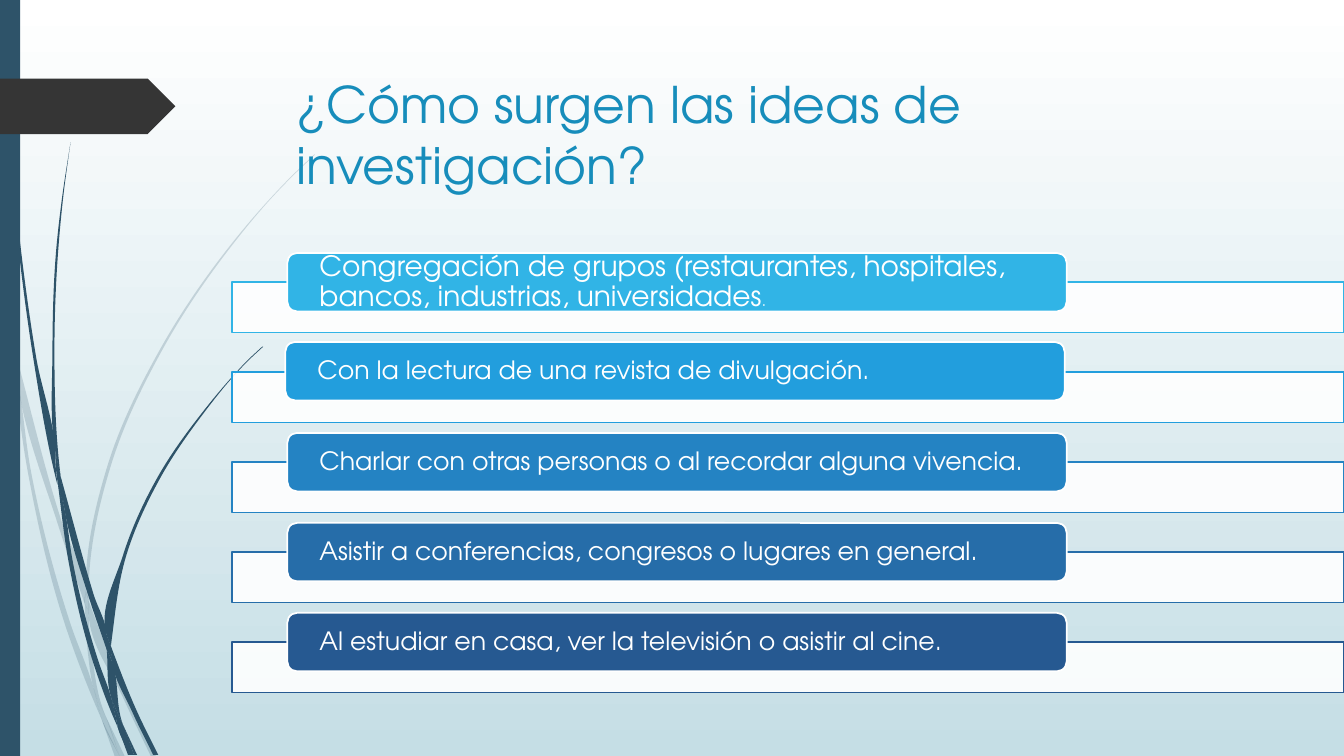
import math
from dataclasses import dataclass

from lxml import etree
from pptx import Presentation
from pptx.dml.color import RGBColor
from pptx.enum.shapes import MSO_SHAPE
from pptx.enum.text import MSO_ANCHOR, MSO_AUTO_SIZE, PP_ALIGN
from pptx.oxml.ns import qn
from pptx.util import Inches, Pt

RECT = MSO_SHAPE.RECTANGLE
ROUNDED = MSO_SHAPE.ROUNDED_RECTANGLE
PENTAGON = MSO_SHAPE.PENTAGON
TOP, MIDDLE = MSO_ANCHOR.TOP, MSO_ANCHOR.MIDDLE
LEFT = PP_ALIGN.LEFT
NO_AUTOFIT = MSO_AUTO_SIZE.NONE

FONT = "TeX Gyre Adventor"
WHITE = RGBColor(0xFF, 0xFF, 0xFF)
MIST = RGBColor(0xC5, 0xDE, 0xE5)
SLATE = RGBColor(0x2E, 0x53, 0x69)
CHARCOAL = RGBColor(0x35, 0x35, 0x35)
TITLE_BLUE = RGBColor(0x17, 0x8D, 0xBB)

ROW_TOP, ROW_PITCH = 2.8, 3.57 / 4
CORNER_COSINE = 0.8


@dataclass(frozen=True)
class Idea:
    text: str
    color: RGBColor
    left: float = 2.85
    rise: float = 0.29
    size: int = 18
    small_end: str = ""


IDEAS = (
    Idea("Congregación de grupos (restaurantes, hospitales, bancos, industrias, universidades",
         RGBColor(0x31, 0xB4, 0xE6), size=20, small_end="."),
    Idea("Con la lectura de una revista de divulgación.", RGBColor(0x22, 0x9E, 0xDD), 2.83, 0.3),
    Idea("Charlar con otras personas o al recordar alguna vivencia.", RGBColor(0x24, 0x83, 0xC3)),
    Idea("Asistir a conferencias, congresos o lugares en general.", RGBColor(0x26, 0x6D, 0xA9)),
    Idea("Al estudiar en casa, ver la televisión o asistir al cine.", RGBColor(0x26, 0x59, 0x91)),
)

PALE_BLADES = (
    ((0.11, 3.5), (0.09, 3.22), (0, 2.82), (0, 2.99), (0.1, 3.44)),
    ((0.58, 5.22), (0.84, 5.99), (0.85, 5.86), (0.62, 5.2), (0.14, 3.45), (0.17, 3.76)),
    ((0.92, 6.07), (0.88, 5.96), (0.88, 6.1), (1.23, 6.94), (1.5, 7.51), (1.55, 7.51), (1.27, 6.92)),
    ((1.19, 7.51), (1.24, 7.51), (1.05, 7.11)),
    ((0.93, 6.83), (0.7, 6.19), (0.31, 4.69), (0.17, 3.76), (0.11, 3.5), (0.28, 4.7), (0.65, 6.21),
     (0.92, 6.93), (1.01, 7.14), (0.99, 7.07)),
    ((0.84, 5.99), (0.87, 6.46), (0.93, 6.83), (0.96, 6.92), (1.05, 7.11), (1.03, 7.06),
     (0.91, 6.46), (0.88, 6.1), (0.88, 6.08)),
    ((0.88, 5.84), (1.1, 4.62), (1.6, 3.49), (2.29, 2.45), (2.68, 1.98), (2.9, 1.75), (3.12, 1.54),
     (3.12, 1.53), (2.89, 1.75), (2.68, 1.97), (2.28, 2.44), (1.58, 3.48), (1.07, 4.61),
     (0.85, 5.84), (0.85, 5.86), (0.88, 5.96)),
    ((1.01, 7.14), (1.14, 7.51), (1.19, 7.51)),
    ((0.88, 6.08), (0.88, 6.1), (0.88, 5.96), (0.85, 5.86), (0.84, 5.99)),
    ((0.96, 6.92), (0.93, 6.83), (0.99, 7.07), (1.01, 7.14), (1.19, 7.51), (1.05, 7.11)),
)

DARK_BLADES = (
    ((0.07, 1.1), (0.17, 2.33), (0.33, 3.55), (0.56, 4.77), (0.57, 4.81), (0.55, 4.57), (0.55, 4.53),
     (0.36, 3.55), (0.19, 2.32), (0.08, 1.09), (0.05, 0.48), (0.04, 0), (0.03, 0), (0.04, 0.48)),
    ((0.88, 5.92), (1.06, 6.45), (1.06, 6.33), (1.06, 6.31), (0.93, 5.9), (0.6, 4.72), (0.64, 5.05)),
    ((1.13, 6.49), (1.1, 6.41), (1.11, 6.56), (1.32, 7.08), (1.52, 7.49), (1.57, 7.49), (1.36, 7.06)),
    ((1.1, 6.91), (0.98, 6.57), (0.72, 5.56), (0.64, 5.05), (0.57, 4.77), (0.68, 5.57), (0.93, 6.59),
     (1.11, 7.08), (1.17, 7.22), (1.16, 7.17)),
    ((0.6, 4.72), (0.58, 4.53), (0.54, 3.49), (0.58, 2.45), (0.63, 1.93), (0.7, 1.41), (0.62, 1.93),
     (0.56, 2.45), (0.52, 3.49), (0.55, 4.49)),
    ((1.33, 7.49), (1.36, 7.49), (1.22, 7.19)),
    ((0.57, 4.77), (0.64, 5.05), (0.6, 4.72), (0.55, 4.49), (0.55, 4.53)),
    ((1.11, 6.33), (1.25, 5.52), (1.58, 4.76), (2.05, 4.06), (2.31, 3.74), (2.45, 3.59), (2.61, 3.44),
     (2.6, 3.44), (2.45, 3.58), (2.31, 3.73), (2.04, 4.05), (1.56, 4.74), (1.22, 5.51),
     (1.06, 6.31), (1.1, 6.41)),
    ((1.17, 7.22), (1.27, 7.49), (1.31, 7.49)),
    ((1.06, 6.45), (1.1, 6.91), (1.16, 7.06), (1.22, 7.19), (1.21, 7.16), (1.11, 6.56), (1.09, 6.51)),
    ((1.06, 6.45), (1.09, 6.51), (1.11, 6.56), (1.1, 6.41), (1.06, 6.31), (1.06, 6.33)),
    ((1.16, 7.06), (1.1, 6.91), (1.16, 7.17), (1.17, 7.22), (1.3, 7.49), (1.33, 7.49), (1.22, 7.19)),
)


def paint(sp, fill: RGBColor, line: RGBColor | None = None, alpha: int = 100) -> None:
    sp.shadow.inherit = False
    sp.fill.solid()
    sp.fill.fore_color.rgb = fill
    if alpha < 100:
        color = sp._element.spPr.find(qn("a:solidFill")).find(qn("a:srgbClr"))
        etree.SubElement(color, qn("a:alpha"), val=str(alpha * 1000))
    if line is None:
        sp.line.fill.background()
    else:
        sp.line.color.rgb = line
        sp.line.width = Pt(1.25)


def add_box(slide, kind, left: float, top: float, width: float, height: float):
    return slide.shapes.add_shape(kind, Inches(left), Inches(top), Inches(width), Inches(height))


def curve_sides(sp) -> None:
    """Turn the straight sides of a closed freeform into curves, keeping sharp corners."""
    points = [complex(int(pt.get("x")), int(pt.get("y"))) for pt in sp._element.iter(qn("a:pt"))]
    chords = [b - a for a, b in zip(points, points[1:])]
    leaving, arriving = [], []
    for before, after in zip([chords[-1], *chords], chords):
        u, v = before / abs(before), after / abs(after)
        if (u * v.conjugate()).real > CORNER_COSINE:
            tangent = u * abs(after) + v * abs(before)
            u = v = tangent / abs(tangent)
        arriving.append(u)
        leaving.append(v)
    arriving.append(arriving.pop(0))
    for i, side in enumerate(list(sp._element.iter(qn("a:lnTo")))):
        reach = abs(chords[i]) / 3
        controls = points[i] + leaving[i] * reach, points[i + 1] - arriving[i] * reach
        side.tag = qn("a:cubicBezTo")
        for position, control in enumerate(controls):
            pt = etree.Element(qn("a:pt"), x=str(round(control.real)), y=str(round(control.imag)))
            side.insert(position, pt)


def add_blade(slide, outline: tuple, alpha: int) -> None:
    corners = [(Inches(x), Inches(y)) for x, y in outline]
    builder = slide.shapes.build_freeform(*corners[0])
    builder.add_line_segments(corners[1:] + corners[:1], close=True)
    sp = builder.convert_to_shape()
    curve_sides(sp)
    paint(sp, SLATE, alpha=alpha)


def add_title(slide, text: str) -> None:
    sp = slide.shapes.title
    sp.left, sp.top, sp.width, sp.height = Inches(2.84), Inches(0.68), Inches(9.75), Inches(1.4)
    tf = sp.text_frame
    tf.text = text
    tf.word_wrap = True
    tf.auto_size = NO_AUTOFIT
    tf.vertical_anchor = TOP
    p = tf.paragraphs[0]
    p.alignment = LEFT
    p.font.name, p.font.size = FONT, Pt(36)
    p.font.color.rgb = TITLE_BLUE


def add_idea(slide, idea: Idea, top: float) -> None:
    paint(add_box(slide, RECT, 2.3, top, 11.03, 0.5), WHITE, idea.color, alpha=90)
    label = add_box(slide, ROUNDED, idea.left, top - idea.rise, 7.73, 0.58)
    paint(label, idea.color, WHITE)
    tf = label.text_frame
    tf.word_wrap = True
    tf.vertical_anchor = MIDDLE
    tf.margin_left = tf.margin_right = Inches(0.29)
    tf.margin_top = tf.margin_bottom = 0
    p = tf.paragraphs[0]
    p.alignment = LEFT
    p.line_spacing = 0.9
    p.font.name, p.font.size = FONT, Pt(idea.size)
    p.font.color.rgb = WHITE
    p.add_run().text = idea.text
    if idea.small_end:
        r = p.add_run()
        r.text = idea.small_end
        r.font.size = Pt(11)


def main() -> None:
    prs = Presentation()
    prs.slide_width, prs.slide_height = Inches(13.33), Inches(7.5)
    slide = prs.slides.add_slide(prs.slide_layouts[5])
    background = slide.background.fill
    background.gradient()
    background.gradient_angle = 270
    for stop, color in zip(background.gradient_stops, (WHITE, MIST)):
        stop.color.rgb = color
    for blades, alpha in ((PALE_BLADES, 20), (DARK_BLADES, 100)):
        for outline in blades:
            add_blade(slide, outline, alpha)
    paint(add_box(slide, RECT, 0, 0, 0.2, 7.5), SLATE)
    arrow = add_box(slide, PENTAGON, 0, 0.78, 1.74, 0.55)
    arrow.adjustments[0] = math.tan(math.radians(45)) / 2
    paint(arrow, CHARCOAL)
    add_title(slide, "¿Cómo surgen las ideas de investigación?")
    title = slide.shapes.title._element
    title.getparent().append(title)
    for row, idea in enumerate(IDEAS):
        add_idea(slide, idea, ROW_TOP + row * ROW_PITCH)
    prs.save("out.pptx")


if __name__ == "__main__":
    main()
